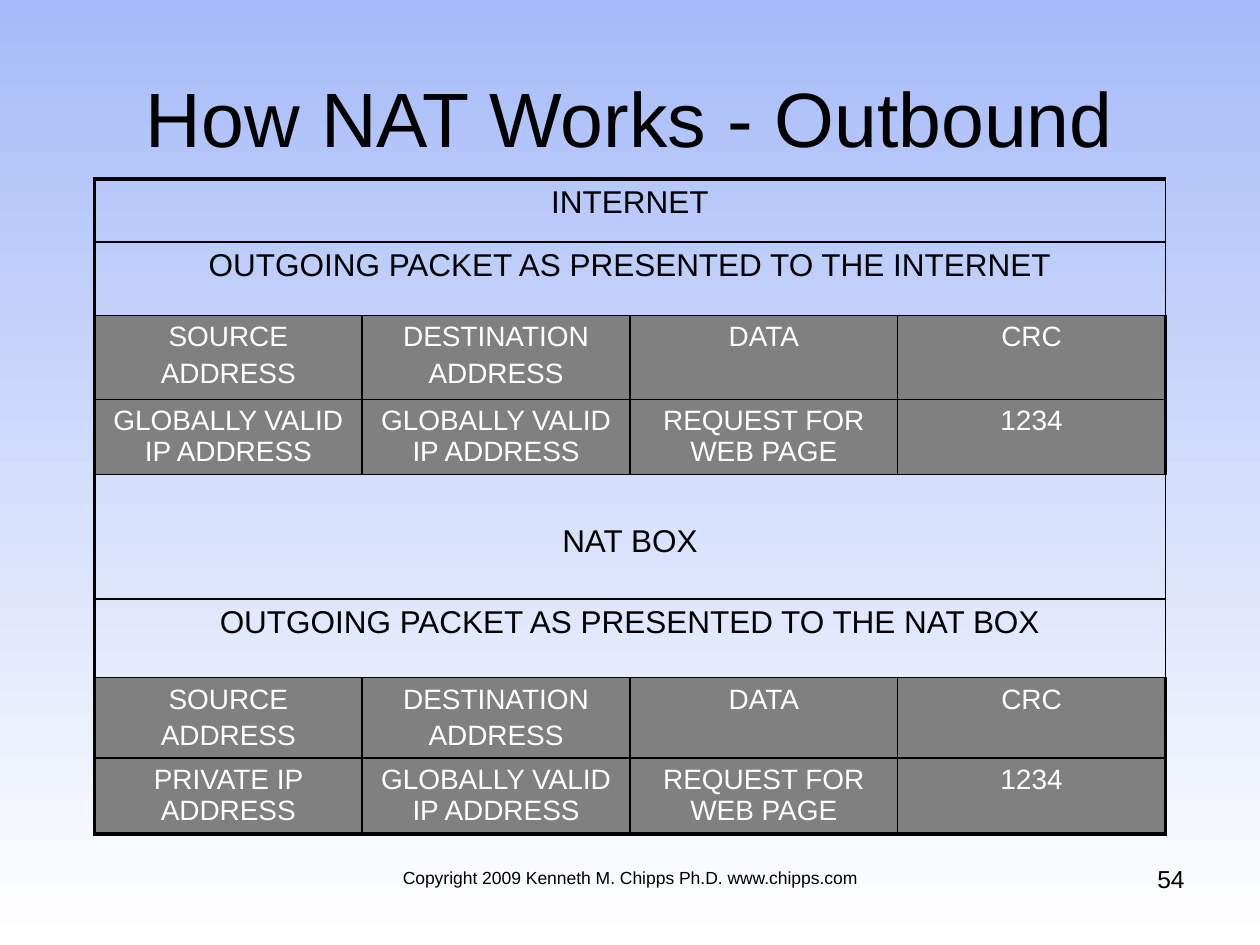
from lxml import etree
from pptx import Presentation
from pptx.dml.color import RGBColor
from pptx.enum.text import MSO_ANCHOR, PP_ALIGN
from pptx.oxml.ns import qn
from pptx.util import Pt

CENTER, RIGHT = PP_ALIGN.CENTER, PP_ALIGN.RIGHT
MIDDLE = MSO_ANCHOR.MIDDLE
BLACK = RGBColor(0, 0, 0)
WHITE = RGBColor(255, 255, 255)
GRAY = RGBColor(0x80, 0x80, 0x80)
SKY = RGBColor(0xA6, 0xBB, 0xF8)
FONT = "Arial"

# Content: one string is a full-width band, a list is a packet row
TITLE = "How NAT Works - Outbound"
COPYRIGHT = "Copyright 2009 Kenneth M. Chipps Ph.D. www.chipps.com"
PAGE_NUMBER = "54"
NAT_BOX = "NAT BOX"
FIELDS = ["SOURCE\nADDRESS", "DESTINATION\nADDRESS", "DATA", "CRC"]
GLOBAL = "GLOBALLY VALID IP ADDRESS"
REQUEST = "REQUEST FOR WEB PAGE"
ROWS = [
    (36, "INTERNET"),
    (42, "OUTGOING PACKET AS PRESENTED TO THE INTERNET"),
    (48, FIELDS),
    (43, [GLOBAL, GLOBAL, REQUEST, "1234"]),
    (71, NAT_BOX),
    (45, "OUTGOING PACKET AS PRESENTED TO THE NAT BOX"),
    (46, FIELDS),
    (43.5, ["PRIVATE IP ADDRESS", GLOBAL, REQUEST, "1234"]),
]
TABLE_LEFT, TABLE_TOP, TABLE_WIDTH = 54, 102.25, 612
NAT_BOX_INSET = 28
OUTER, INNER = 2.25, 1


def write(frame, text, size, color, align, gap=0):
    """Fill a text frame, one paragraph per line of text."""
    frame.word_wrap = True
    for i, line in enumerate(text.split("\n")):
        para = frame.add_paragraph() if i else frame.paragraphs[0]
        para.alignment = align
        para.space_before = Pt(gap)
        span = para.add_run()
        span.text = line
        span.font.name, span.font.size = FONT, Pt(size)
        span.font.color.rgb = color


def add_borders(cell, widths):
    """Draw left, right, top and bottom edges ahead of the cell's fill."""
    props = cell._tc.get_or_add_tcPr()
    for i, (side, width) in enumerate(zip("LRTB", widths)):
        line = etree.Element(qn(f"a:ln{side}"), w=str(Pt(width)))
        fill = etree.SubElement(line, qn("a:solidFill"))
        etree.SubElement(fill, qn("a:srgbClr"), val=str(BLACK))
        props.insert(i, line)


def add_label(page, text, size, align, left, top, width, height):
    box = page.shapes.add_textbox(Pt(left), Pt(top), Pt(width), Pt(height))
    write(box.text_frame, text, size, BLACK, align)


def add_packet_table(page):
    last_row, last_col = len(ROWS) - 1, len(FIELDS) - 1
    height = sum(row_height for row_height, _ in ROWS)
    table = page.shapes.add_table(
        len(ROWS), len(FIELDS), Pt(TABLE_LEFT), Pt(TABLE_TOP),
        Pt(TABLE_WIDTH), Pt(height)).table
    table.first_row = table.horz_banding = False

    for r, (row_height, content) in enumerate(ROWS):
        table.rows[r].height = Pt(row_height)
        is_band = isinstance(content, str)
        if is_band:
            table.cell(r, 0).merge(table.cell(r, last_col))
        texts = [content] if is_band else content
        size, color = (18, BLACK) if is_band else (16, WHITE)

        for c in range(len(FIELDS)):
            cell = table.cell(r, c)
            if is_band:
                cell.fill.background()
            else:
                cell.fill.solid()
                cell.fill.fore_color.rgb = GRAY
            add_borders(cell, [OUTER if edge else INNER for edge in (
                c == 0, c == last_col, r == 0, r == last_row)])
            if c < len(texts):
                write(cell.text_frame, texts[c], size, color, CENTER, size / 5)
        if content == NAT_BOX:
            table.cell(r, 0).margin_top = Pt(NAT_BOX_INSET)


def main():
    deck = Presentation()
    deck.slide_width, deck.slide_height = Pt(720), Pt(540)
    page = deck.slides.add_slide(deck.slide_layouts[5])

    # Background, fading downwards
    backdrop = page.background.fill
    backdrop.gradient()
    backdrop.gradient_angle = 270
    for stop, color in zip(backdrop.gradient_stops, (SKY, WHITE)):
        stop.color.rgb = color

    # Title
    title = page.shapes.title
    title.left, title.top = Pt(36), Pt(21.6)
    title.width, title.height = Pt(648), Pt(90)
    title.text_frame.vertical_anchor = MIDDLE
    write(title.text_frame, TITLE, 44, BLACK, CENTER)

    # Table and footer
    add_packet_table(page)
    add_label(page, COPYRIGHT, 10, CENTER, 216, 491.75, 288, 37.5)
    add_label(page, PAGE_NUMBER, 14, RIGHT, 516, 490.25, 168, 37.5)

    deck.save("out.pptx")


if __name__ == "__main__":
    main()
